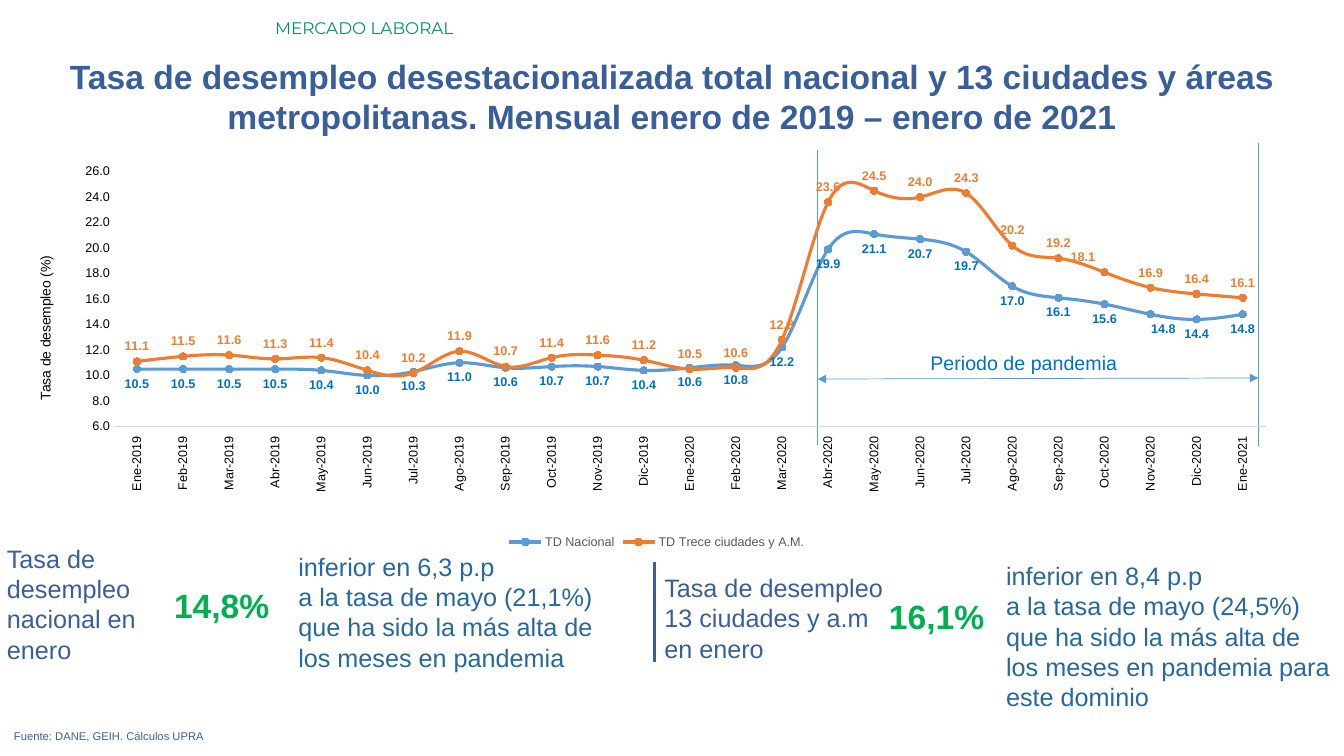
from lxml import etree
from pptx import Presentation
from pptx.chart.data import CategoryChartData
from pptx.dml.color import RGBColor
from pptx.enum.chart import (XL_CHART_TYPE, XL_LABEL_POSITION as LabelPos,
                             XL_LEGEND_POSITION, XL_MARKER_STYLE,
                             XL_TICK_LABEL_POSITION, XL_TICK_MARK)
from pptx.enum.shapes import MSO_CONNECTOR
from pptx.enum.text import MSO_ANCHOR, PP_ALIGN as Align
from pptx.oxml.ns import qn
from pptx.util import Inches, Pt

COLORS = {
    "heading": "395F9B", "section": "009267", "figure": "00B050",
    "detail": "27689D", "period": "0070C0", "national": "5B9BD5",
    "cities": "ED7D31", "axis": "D9D9D9", "legend": "595959", "black": "000000",
}
MONTHS = "Ene Feb Mar Abr May Jun Jul Ago Sep Oct Nov Dic".split()
PERIODS = [f"{month}-{year}" for year in (2019, 2020) for month in MONTHS] + ["Ene-2021"]
NATIONAL = [10.5, 10.5, 10.5, 10.5, 10.4, 10, 10.3, 11, 10.6, 10.7, 10.7, 10.4, 10.6,
            10.8, 12.2, 19.9, 21.1, 20.7, 19.7, 17, 16.1, 15.6, 14.8, 14.4, 14.8]
CITIES = [11.1, 11.5, 11.6, 11.3, 11.4, 10.4, 10.2, 11.9, 10.7, 11.4, 11.6, 11.2, 10.5,
          10.6, 12.8, 23.6, 24.5, 24, 24.3, 20.2, 19.2, 18.1, 16.9, 16.4, 16.1]
RATE_FORMAT = "#,##0.0"


def color(name):
    return RGBColor.from_string(COLORS[name])


def set_layout(parent, index, **settings):
    """Give a chart part a manual layout."""
    for old in parent.findall(qn("c:layout")):
        parent.remove(old)
    layout = etree.Element(qn("c:layout"))
    manual = etree.SubElement(layout, qn("c:manualLayout"))
    for tag, value in settings.items():
        etree.SubElement(manual, qn(f"c:{tag}")).set("val", str(value))
    parent.insert(index, layout)


def turn_upwards(element):
    for body in element.iter(qn("a:bodyPr")):
        body.set("rot", "-5400000")
        body.set("vert", "horz")


class SlideBuilder:
    def __init__(self, prs):
        self.slide = prs.slides.add_slide(prs.slide_layouts[5])
        self.font = "Arial"

    def style(self, font, size, name, bold=False, face=None):
        font.name, font.size, font.bold = face or self.font, Pt(size), bold
        font.color.rgb = color(name)

    def fill_text(self, shape, box, lines, size, name, align, bold=False, face=None):
        shape.left, shape.top, shape.width, shape.height = map(Inches, box)
        frame = shape.text_frame
        frame.word_wrap = True
        frame.vertical_anchor = MSO_ANCHOR.TOP
        frame.text = "\n".join(lines)
        for paragraph in frame.paragraphs:
            paragraph.alignment = align
            paragraph.line_spacing = 1.0
            self.style(paragraph.font, size, name, bold, face)

    def title(self, box, line, size, name):
        self.fill_text(self.slide.shapes.title, box, [line], size, name, Align.CENTER, True)

    def text(self, box, lines, size, name, align=Align.LEFT, bold=False, face=None):
        shape = self.slide.shapes.add_textbox(*map(Inches, box))
        self.fill_text(shape, box, lines, size, name, align, bold, face)

    def line(self, start, end, name, width, arrows=False):
        rule = self.slide.shapes.add_connector(
            MSO_CONNECTOR.STRAIGHT, *map(Inches, start + end))
        rule.line.color.rgb = color(name)
        rule.line.width = Pt(width)
        properties = rule._element.spPr
        if arrows:
            for tag in ("a:headEnd", "a:tailEnd"):
                etree.SubElement(properties.find(qn("a:ln")), qn(tag)).set("type", "triangle")
        etree.SubElement(properties, qn("a:effectLst"))

    def axis(self, axis):
        axis.has_major_gridlines = False
        axis.major_tick_mark = axis.minor_tick_mark = XL_TICK_MARK.NONE
        self.style(axis.tick_labels.font, 9, "black")

    def series(self, series, name, label_color, position, moved, shift):
        series.smooth = True
        series.format.line.color.rgb = color(name)
        series.format.line.width = Pt(2.25)
        marker = series.marker
        marker.style, marker.size = XL_MARKER_STYLE.CIRCLE, 5
        marker.format.fill.solid()
        marker.format.fill.fore_color.rgb = color(name)
        marker.format.line.color.rgb = color(name)
        labels = series.data_labels
        labels.show_value = True
        labels.number_format, labels.number_format_is_linked = RATE_FORMAT, False
        labels.position = position
        self.style(labels.font, 9, label_color, True)
        # One label is moved sideways, clear of the curve
        label = series.points[moved].data_label
        label.position = position
        self.style(label.font, 9, label_color, True)
        set_layout(next(series._element.iter(qn("c:dLbl"))), 1, x=shift, y=0)

    def chart(self, box):
        data = CategoryChartData(number_format=RATE_FORMAT)
        data.categories = PERIODS
        data.add_series("TD Nacional", NATIONAL)
        data.add_series("TD Trece ciudades y A.M.", CITIES)
        chart = self.slide.shapes.add_chart(
            XL_CHART_TYPE.LINE_MARKERS, *map(Inches, box), data).chart
        self.style(chart.font, 10, "black")
        chart.has_title = False
        chart.has_legend = True
        chart.legend.position = XL_LEGEND_POSITION.BOTTOM
        chart.legend.include_in_layout = False
        self.style(chart.legend.font, 9, "legend")

        # Axes
        months, rates = chart.category_axis, chart.value_axis
        self.axis(months)
        months.tick_label_position = XL_TICK_LABEL_POSITION.LOW
        months.format.line.color.rgb = color("axis")
        months.format.line.width = Pt(0.75)
        turn_upwards(months._element)
        self.axis(rates)
        rates.minimum_scale, rates.maximum_scale, rates.major_unit = 6, 26, 2
        rates.tick_labels.number_format = RATE_FORMAT
        rates.tick_labels.number_format_is_linked = False
        rates.format.line.fill.background()
        heading = rates.axis_title
        heading.text_frame.text = "Tasa de desempleo (%)"
        self.style(heading.text_frame.paragraphs[0].font, 10, "black")
        turn_upwards(heading._element)
        set_layout(heading._element, 1, xMode="edge", yMode="edge", x=0.01, y=0.26)

        # Plot and its two curves
        plot = chart.plots[0]
        plot.vary_by_categories = False
        set_layout(plot._element.getparent(), 0, layoutTarget="inner", xMode="edge",
                   yMode="edge", x=0.073, y=0.058, w=0.906, h=0.629)
        national, cities = plot.series
        self.series(national, "national", "period", LabelPos.BELOW,
                    PERIODS.index("Nov-2020"), 0.01)
        self.series(cities, "cities", "cities", LabelPos.ABOVE,
                    PERIODS.index("Oct-2020"), -0.017)


def main():
    prs = Presentation()
    prs.slide_width, prs.slide_height = Inches(13.33), Inches(7.5)
    page = SlideBuilder(prs)

    # Headings and source
    page.text((2.63, 0.13, 10.7, 0.3), ["MERCADO LABORAL"], 12, "section", face="Montserrat")
    page.title((0, 0.5, 13.33, 0.91),
               "Tasa de desempleo desestacionalizada total nacional y 13 ciudades y áreas "
               "metropolitanas. Mensual enero de 2019 – enero de 2021", 24, "heading")
    page.text((0.04, 7.19, 12.91, 0.24), ["Fuente: DANE, GEIH. Cálculos UPRA"],
              8, "heading", Align.JUSTIFY)

    # Findings: label, rate and comparison for each domain
    peak = "que ha sido la más alta de los meses en pandemia"
    findings = [
        ((-0.03, 5.34, 2.22, 1.31), ["Tasa de desempleo nacional en", "enero"],
         (1.61, 5.75, 1.16, 0.5), "14,8%",
         (2.86, 5.42, 3.45, 1.31),
         ["inferior en 6,3 p.p", f"a la tasa de mayo (21,1%) {peak}"]),
        ((6.49, 5.63, 2.45, 1.31), ["Tasa de desempleo", "13 ciudades y a.m en enero"],
         (8.41, 5.86, 1.45, 0.5), "16,1%",
         (9.88, 5.51, 3.45, 1.62),
         ["inferior en 8,4 p.p", f"a la tasa de mayo (24,5%) {peak} para este dominio"]),
    ]
    for domain_box, domain, rate_box, rate, detail_box, detail in findings:
        page.text(domain_box, domain, 18, "heading")
        page.text(rate_box, [rate], 24, "figure", Align.RIGHT, True)
        page.text(detail_box, detail, 18, "detail")
    page.line((6.49, 5.58), (6.49, 6.57), "heading", 2.25)

    # Pandemic period
    page.line((8.11, 1.49), (8.11, 4.41), "national", 0.5)
    page.line((12.48, 1.42), (12.48, 4.42), "national", 0.5)
    page.line((8.11, 3.76), (12.48, 3.75), "national", 0.5, arrows=True)
    page.text((9.13, 3.43, 2.63, 0.34), ["Periodo de pandemia"], 14, "period")

    # Unemployment rate chart
    page.chart((0.21, 1.47, 12.61, 4.02))
    prs.save("out.pptx")


if __name__ == "__main__":
    main()
